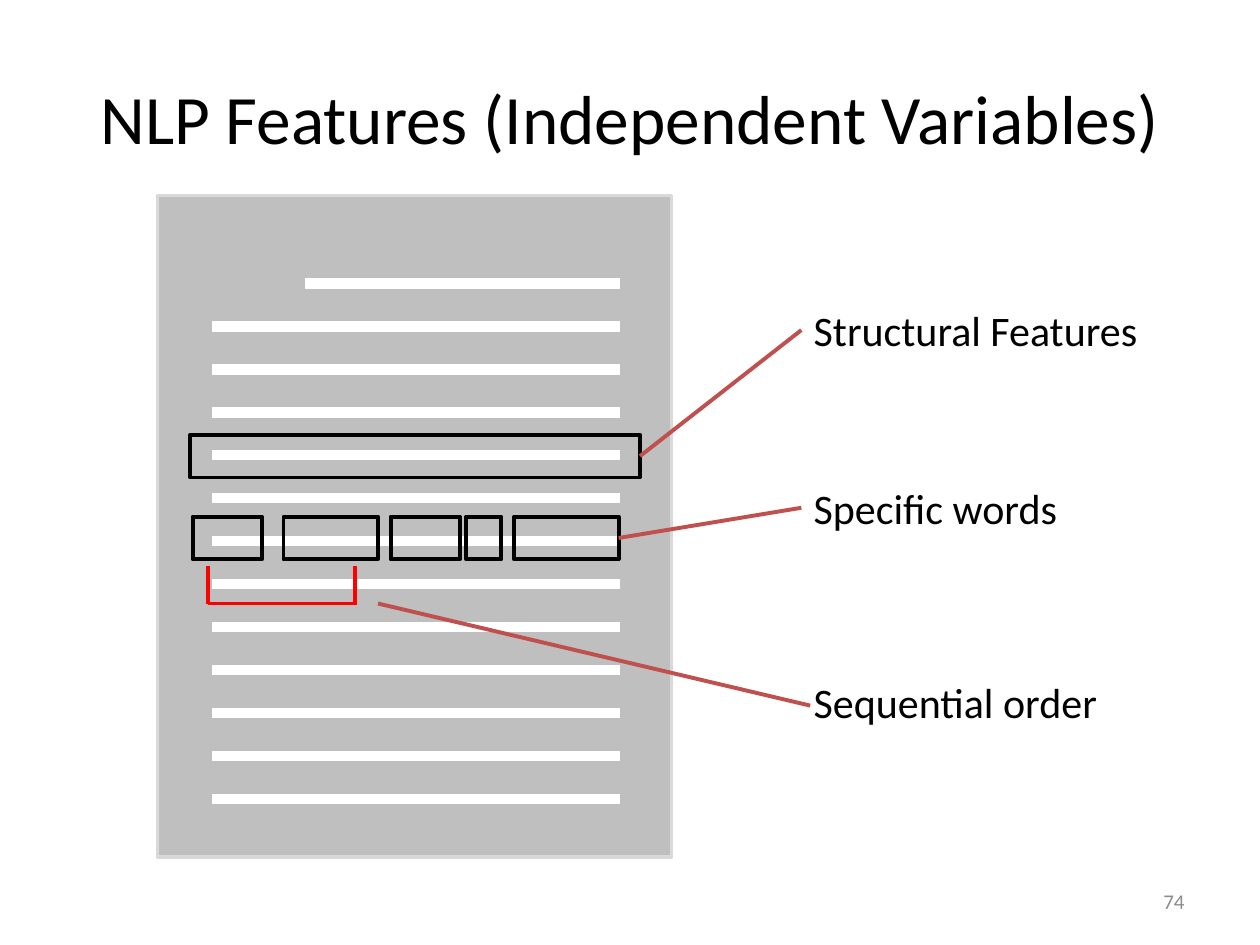
"""Build a slide that shows NLP features marked on a schematic document."""
from pptx import Presentation
from pptx.dml.color import RGBColor
from pptx.enum.shapes import MSO_CONNECTOR as CONN, MSO_SHAPE as SHAPE
from pptx.enum.text import MSO_ANCHOR as ANCHOR, PP_ALIGN as ALIGN
from pptx.oxml.ns import qn
from pptx.util import Inches, Pt
from lxml import etree


def write(sp, text, size=24, color="000000", align=ALIGN.LEFT, anchor=ANCHOR.TOP):
    tf = sp.text_frame
    tf.word_wrap = True
    tf.vertical_anchor = anchor
    p = tf.paragraphs[0]
    p.alignment = align
    r = p.add_run()
    r.text = text
    r.font.name = "Calibri"
    r.font.size = Pt(size)
    r.font.color.rgb = RGBColor.from_string(color)


def line(shapes, x1, y1, x2, y2, color, width=2.25):
    sp = shapes.add_connector(CONN.STRAIGHT, Inches(x1), Inches(y1), Inches(x2), Inches(y2))
    sp.line.color.rgb = RGBColor.from_string(color)
    sp.line.width = Pt(width)
    etree.SubElement(sp.line._get_or_add_ln().getparent(), qn("a:effectLst"))
    return sp


prs = Presentation()
prs.slide_width, prs.slide_height = Inches(10), Inches(7.5)
s = prs.slides.add_slide(prs.slide_layouts[5])

title = s.shapes.title
title.left, title.top, title.width, title.height = map(Inches, (0.5, 0.3, 9, 1.25))
write(title, "NLP Features (Independent Variables)", size=39.6, align=ALIGN.CENTER, anchor=ANCHOR.MIDDLE)

page = s.shapes.add_shape(SHAPE.RECTANGLE, Inches(1.25), Inches(1.55), Inches(4.08), Inches(5.25))
page.shadow.inherit = False
page.fill.solid()
page.fill.fore_color.rgb = RGBColor.from_string("BFBFBF")
page.line.color.rgb = RGBColor.from_string("D9D9D9")
page.line.width = Pt(2)

for i in range(13):
    y = 2.25 + i * 4.09 / 12
    line(s.shapes, 1.68 if i else 2.42, y, 4.92, y, "FFFFFF", width=6)

labels = []
for text, top in (("Structural Features", 2.37), ("Specific words", 3.78), ("Sequential order", 5.32)):
    label = s.shapes.add_textbox(Inches(6.36), Inches(top), Inches(3.3), Inches(0.5))
    write(label, text)
    labels.append(label)

frames = []
for left, top, width in ((1.51, 3.45, 3.57), (1.53, 4.1, 0.55), (2.25, 4.1, 0.75),
                         (3.1, 4.1, 0.55), (3.7, 4.1, 0.28), (4.08, 4.1, 0.83)):
    frame = s.shapes.add_shape(SHAPE.RECTANGLE, Inches(left), Inches(top), Inches(width), Inches(0.34))
    frame.shadow.inherit = False
    frame.fill.background()
    frame.line.color.rgb = RGBColor.from_string("000000")
    frame.line.width = Pt(2.25)
    frames.append(frame)

for frame, label in ((frames[0], labels[0]), (frames[-1], labels[1])):
    pointer = line(s.shapes, 5, 4, 6.36, 4, "C0504D")
    pointer.begin_connect(frame, 3)
    pointer.end_connect(label, 1)

bracket = s.shapes.add_group_shape()
for ends in ((1.65, 4.79, 2.83, 4.79), (1.65, 4.49, 1.65, 4.79), (2.82, 4.49, 2.82, 4.79)):
    line(bracket.shapes, *ends, "FF0000")
line(s.shapes, 3, 4.79, 6.43, 5.6, "C0504D")

number = s.shapes.add_textbox(Inches(7.17), Inches(6.95), Inches(2.33), Inches(0.4))
write(number, "74", size=12, color="8C8C8C", align=ALIGN.RIGHT, anchor=ANCHOR.MIDDLE)

prs.save("out.pptx")
